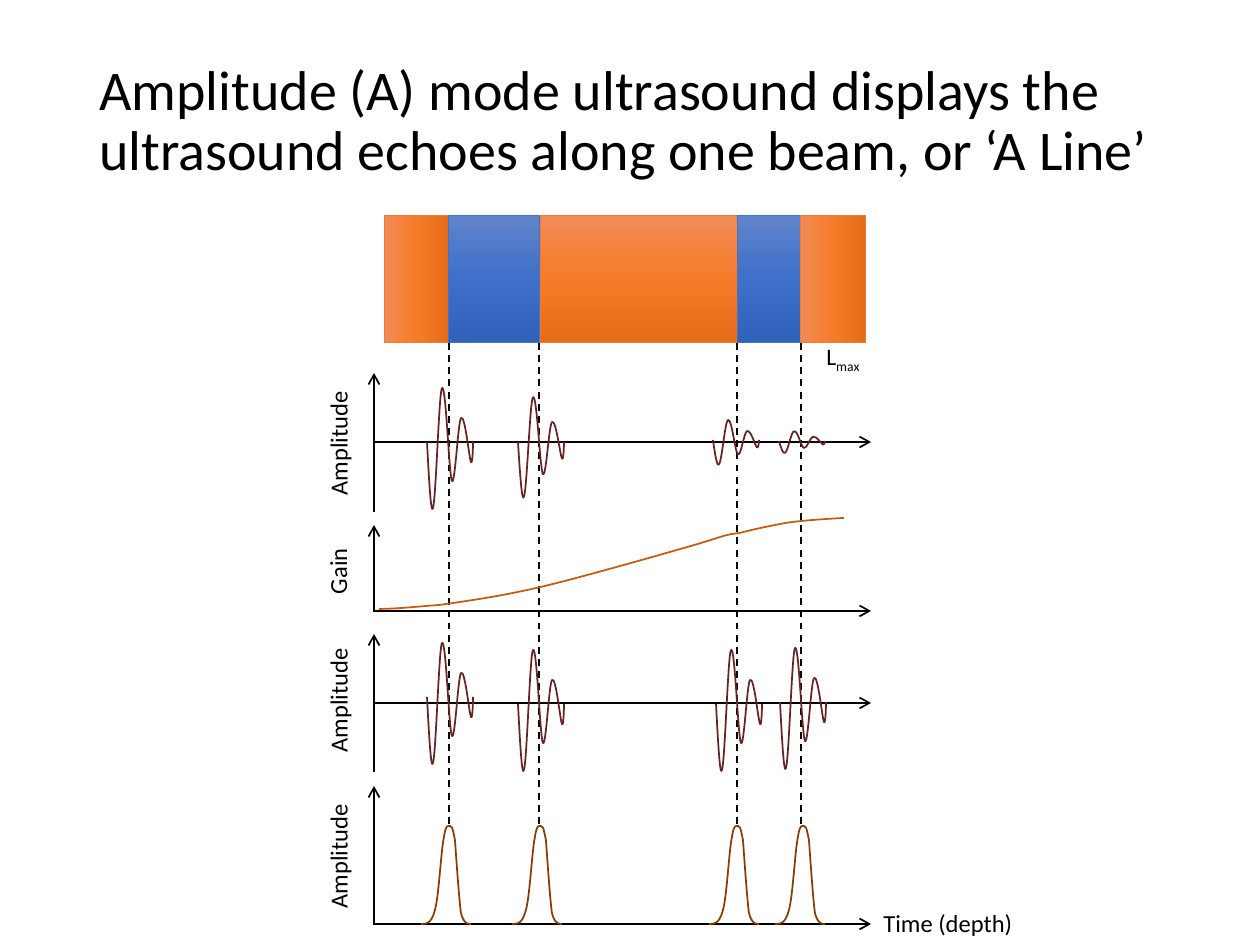
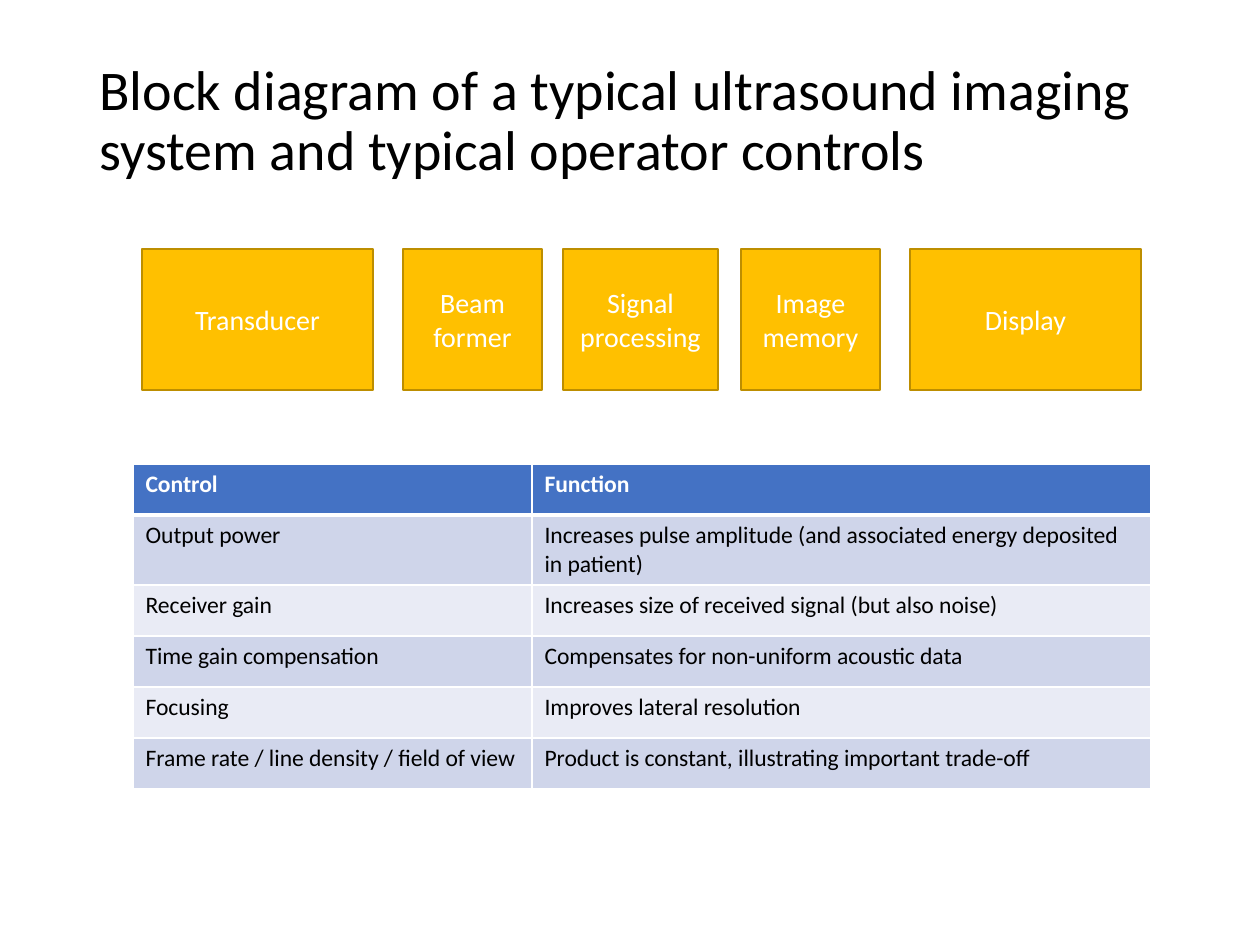
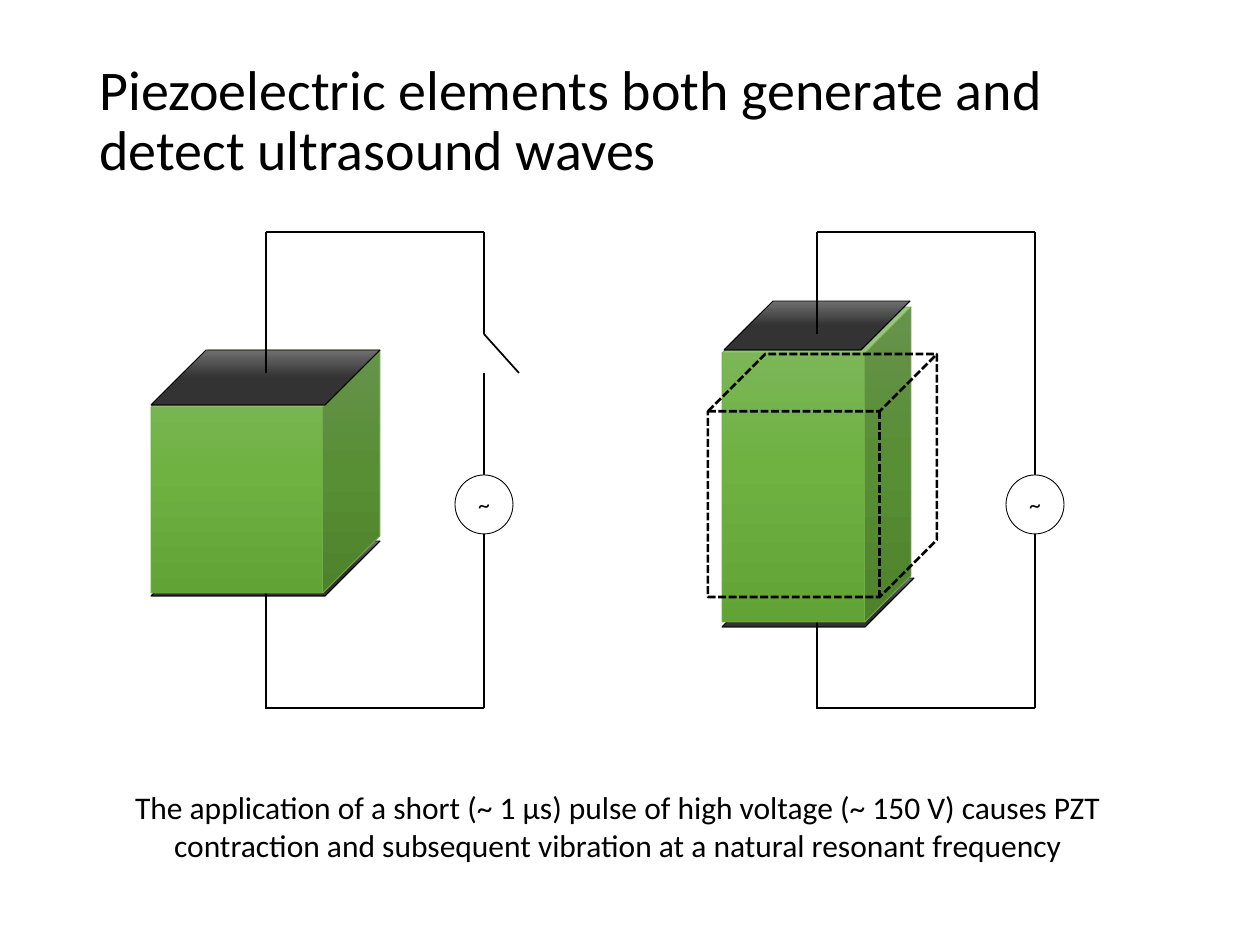
from itertools import pairwise
from typing import NamedTuple

from lxml.etree import SubElement
from pptx import Presentation
from pptx.dml.color import RGBColor
from pptx.enum.dml import MSO_LINE as Dash
from pptx.enum.shapes import MSO_CONNECTOR, MSO_SHAPE as Preset
from pptx.enum.text import MSO_ANCHOR as Anchor, MSO_AUTO_SIZE as AutoSize, PP_ALIGN as Align
from pptx.oxml.ns import qn
from pptx.util import Emu, Pt

PX = 914400 / 126
FONT = "Calibri"
COLORS = {
    "black": "000000",
    "white": "FFFFFF",
    "echo": "632523",
    "gain": "C55A11",
    "envelope": "843C0B",
    "block": "FFC000",
    "block_edge": "BD8E00",
    "header": "4472C4",
    "band_dark": "CFD5EA",
    "band_light": "E9EBF5",
    "blue_edge": "4472C4",
    "orange_edge": "ED7D31",
    "green_edge": "70AD47",
}
GRADIENTS = {
    "blue": ("6183CB", "3E70CA", "3062BB"),
    "orange": ("F18C57", "F67B28", "E56C19"),
    "green": ("81B861", "6FB242", "62A336"),
    "black": ("4B4B4B", "000000", "000000"),
}


class Box(NamedTuple):
    left: int
    top: int
    width: int
    height: int


class Point(NamedTuple):
    x: int
    y: int


class Pulse(NamedTuple):
    left: int
    baseline: int
    percent: int = 100


class Plot(NamedTuple):
    label: str
    label_box: Box
    baseline: int
    bottom: int
    top: int


class Block(NamedTuple):
    label: str
    left: int
    width: int


class Element(NamedTuple):
    bottom_plate: Box
    body: Box
    depth: float
    top_plate: Box
    lead_end: int
    shift: int


# Each curve is a start point followed by groups of three cubic control points.
ECHO = [Point(*xy) for xy in (
    (0, 0), (2, 38), (4, 74), (6, 66), (9, 57), (12, -50), (15, -54),
    (19, -59), (22, 34), (25, 39), (28, 44), (31, -20), (34, -24),
    (38, -28), (42, 15), (44, 20), (45, 24), (46, 11), (46, 0))]
ENVELOPE = [Point(*xy) for xy in (
    (0, 0), (5, 0), (10, 1), (14, -14), (18, -28), (20, -73), (23, -87),
    (25, -101), (28, -98), (29, -98), (31, -97), (31, -99), (34, -84),
    (35, -71), (38, -25), (40, -11), (43, 2), (50, 0), (50, 0))]
GAIN = [Point(*xy) for xy in (
    (379, 609), (396, 609), (413, 607), (440, 605), (467, 601), (498, 597), (541, 587),
    (584, 577), (698, 544), (698, 544), (731, 534), (724, 535), (740, 533),
    (755, 529), (770, 526), (786, 523), (804, 520), (844, 518), (844, 518))]

TISSUE_EDGES = (384, 449, 540, 737, 801, 866)
INTERFACES = (449, 539, 737, 801)
ECHOES = (
    Pulse(427, 442), Pulse(518, 442, 83), Pulse(713, 440, 37), Pulse(779, 441, 18),
    Pulse(427, 697), Pulse(518, 704), Pulse(716, 704), Pulse(780, 702),
)
ENVELOPES = [Pulse(left, 924) for left in (421, 512, 709, 775)]
PLOTS = (
    Plot("Amplitude", Box(273, 421, 131, 43), 442, 512, 373),
    Plot("Gain", Box(302, 549, 72, 43), 611, 612, 525),
    Plot("Amplitude", Box(273, 678, 131, 43), 703, 772, 634),
    Plot("Amplitude", Box(273, 834, 131, 43), 924, 925, 786),
)
BLOCKS = (
    Block("Transducer", 142, 231),
    Block("Beam former", 403, 139),
    Block("Signal processing", 563, 155),
    Block("Image memory", 741, 139),
    Block("Display", 910, 231),
)
CONTROLS = (
    ("Control", "Function"),
    ("Output power", "Increases pulse amplitude (and associated energy deposited in patient)"),
    ("Receiver gain", "Increases size of received signal (but also noise)"),
    ("Time gain compensation", "Compensates for non-uniform acoustic data"),
    ("Focusing", "Improves lateral resolution"),
    ("Frame rate / line density / field of view",
     "Product is constant, illustrating important trade-off"),
)
RESTING = Element(Box(151, 541, 229, 55), Box(151, 350, 229, 243), 0.25,
                  Box(151, 350, 229, 55), 373, 0)
DRIVEN = Element(Box(722, 578, 192, 49), Box(722, 307, 189, 315), 0.244,
                 Box(724, 301, 186, 49), 334, 551)


def px(length: float) -> Emu:
    return Emu(round(length * PX))


def rgb(name: str) -> RGBColor:
    return RGBColor.from_string(COLORS[name])


def add_span(para, text: str, *, size: float, color: str = "black",
             bold: bool = False, baseline: int = 0) -> None:
    """Append a run; a negative baseline percentage makes a subscript."""
    span = para.add_run()
    span.text = text
    span.font.name = FONT
    span.font.size = Pt(size)
    span.font.bold = bold
    span.font.color.rgb = rgb(color)
    if baseline:
        span.font._element.set("baseline", str(baseline * 1000))


def write(frame, text: str, *, size: float, color: str = "black", bold: bool = False,
          align=Align.LEFT, anchor=Anchor.TOP, wrap: bool = True, spacing: float = 1.0):
    frame.word_wrap = wrap
    frame.vertical_anchor = anchor
    para = frame.paragraphs[0]
    para.alignment = align
    para.line_spacing = spacing
    add_span(para, text, size=size, color=color, bold=bold)
    return para


def add_text(slide, box: Box, text: str, *, rotation: int = 0, grow: bool = True, **style):
    holder = slide.shapes.add_textbox(*map(px, box))
    holder.rotation = rotation
    para = write(holder.text_frame, text, **style)
    holder.text_frame.auto_size = AutoSize.SHAPE_TO_FIT_TEXT if grow else AutoSize.NONE
    return para


def add_titled_slide(deck, title: str):
    slide = deck.slides.add_slide(deck.slide_layouts[6])
    add_text(slide, Box(87, 50, 1086, 145), title, grow=False,
             size=32, anchor=Anchor.MIDDLE, spacing=0.9)
    return slide


def add_preset(slide, preset, box: Box, *, edge: str, fill: str = "",
               gradient: str = "", angle: int = 90, width: float = 0.5):
    """Draw a preset shape; the gradient angle runs clockwise from left to right."""
    shape = slide.shapes.add_shape(preset, *map(px, box))
    shape.shadow.inherit = False
    shape.line.color.rgb = rgb(edge)
    shape.line.width = Pt(width)
    if gradient:
        shape.fill.gradient()
        shape.fill.gradient_angle = -angle % 360
        stops = shape._element.spPr.find(".//" + qn("a:gsLst"))
        stops.clear()
        for position, color in zip((0, 50000, 100000), GRADIENTS[gradient]):
            stop = SubElement(stops, qn("a:gs"), pos=str(position))
            SubElement(stop, qn("a:srgbClr"), val=color)
    elif fill:
        shape.fill.solid()
        shape.fill.fore_color.rgb = rgb(fill)
    else:
        shape.fill.background()
    return shape


def add_line(slide, start: Point, end: Point, *, arrow: bool = False, dash=None) -> None:
    line = slide.shapes.add_connector(MSO_CONNECTOR.STRAIGHT, *map(px, (*start, *end)))
    line.line.color.rgb = rgb("black")
    line.line.width = Pt(1)
    if dash:
        line.line.dash_style = dash
    if arrow:
        SubElement(line.line._get_or_add_ln(), qn("a:tailEnd"), type="arrow")
    SubElement(line._element.spPr, qn("a:effectLst"))


def add_curve(slide, points: list[Point], color: str) -> None:
    """Draw an open outline whose points are a start and cubic control triples."""
    start, *controls = [(px(x), px(y)) for x, y in points]
    builder = slide.shapes.build_freeform(*start)
    builder.add_line_segments(controls, close=False)
    curve = builder.convert_to_shape()
    curve.shadow.inherit = False
    curve.fill.background()
    curve.line.color.rgb = rgb(color)
    curve.line.width = Pt(1)
    outline = curve._element.spPr.find(".//" + qn("a:path"))
    segments = outline.findall(qn("a:lnTo"))
    for first in range(0, len(segments), 3):
        cubic = SubElement(outline, qn("a:cubicBezTo"))
        for segment in segments[first:first + 3]:
            cubic.append(segment[0])
            outline.remove(segment)


def add_pulse(slide, outline: list[Point], pulse: Pulse, color: str) -> None:
    points = [Point(pulse.left + x, pulse.baseline + y * pulse.percent / 100)
              for x, y in outline]
    add_curve(slide, points, color)


def add_plot(slide, plot: Plot) -> None:
    add_line(slide, Point(375, plot.baseline), Point(871, plot.baseline), arrow=True)
    add_line(slide, Point(374, plot.bottom), Point(374, plot.top), arrow=True)
    add_text(slide, plot.label_box, plot.label, rotation=270, size=14, wrap=False)


def build_a_mode(deck) -> None:
    slide = add_titled_slide(deck, "Amplitude (A) mode ultrasound displays the "
                                   "ultrasound echoes along one beam, or ‘A Line’")
    for x in INTERFACES:
        add_line(slide, Point(x, 343), Point(x, 825), dash=Dash.DASH)
    for index, (left, right) in enumerate(pairwise(TISSUE_EDGES)):
        tissue = "blue" if index % 2 else "orange"
        add_preset(slide, Preset.RECTANGLE, Box(left, 216, right - left, 127),
                   edge=tissue + "_edge", gradient=tissue,
                   angle=0 if index in (0, 4) else 90)
    depth_label = add_text(slide, Box(814, 336, 76, 50), "L", size=13.5, wrap=False)
    add_span(depth_label, "max", size=13.5, baseline=-25)
    for plot in PLOTS:
        add_plot(slide, plot)
    for echo in ECHOES:
        add_pulse(slide, ECHO, echo, "echo")
    add_curve(slide, GAIN, "gain")
    for envelope in ENVELOPES:
        add_pulse(slide, ENVELOPE, envelope, "envelope")
    add_text(slide, Box(871, 902, 155, 43), "Time (depth)", size=14, wrap=False)


def set_borders(cell, **widths: float) -> None:
    """Give the cell white borders, with the widths in points by side."""
    properties = cell._tc.get_or_add_tcPr()
    for index, (side, width) in enumerate(widths.items()):
        border = properties.makeelement(qn("a:ln" + side), {"w": str(Pt(width))})
        fill = SubElement(border, qn("a:solidFill"))
        SubElement(fill, qn("a:srgbClr"), val=COLORS["white"])
        properties.insert(index, border)


def add_control_table(slide) -> None:
    row_height, widths = 51, (399, 619)
    box = Box(133, 464, sum(widths), row_height * len(CONTROLS))
    table = slide.shapes.add_table(len(CONTROLS), len(widths), *map(px, box)).table
    for column, width in zip(table.columns, widths):
        column.width = px(width)
    for row, texts in enumerate(CONTROLS):
        table.rows[row].height = px(row_height)
        header = row == 0
        fill = "header" if header else "band_dark" if row % 2 else "band_light"
        for column, text in enumerate(texts):
            cell = table.cell(row, column)
            cell.fill.solid()
            cell.fill.fore_color.rgb = rgb(fill)
            para = cell.text_frame.paragraphs[0]
            add_span(para, text, size=13.5, bold=header,
                     color="white" if header else "black")
            set_borders(cell, L=1, R=1, T=3 if row == 1 else 1, B=3 if header else 1)


def build_block_diagram(deck) -> None:
    slide = add_titled_slide(deck, "Block diagram of a typical ultrasound imaging "
                                   "system and typical operator controls")
    for block in BLOCKS:
        shape = add_preset(slide, Preset.RECTANGLE, Box(block.left, 249, block.width, 141),
                           edge="block_edge", fill="block", width=1)
        write(shape.text_frame, block.label, size=16, color="white",
              align=Align.CENTER, anchor=Anchor.MIDDLE)
    add_control_table(slide)


def add_cube(slide, box: Box, depth: float, color: str) -> None:
    cube = add_preset(slide, Preset.CUBE, box, edge="black" if color == "black" else "green_edge",
                      gradient=color)
    cube.adjustments[0] = depth


def add_circuit(slide, element: Element, contacts: list[tuple[Point, Point]]) -> None:
    """Draw an element between its plates, wired to a generator through the contacts."""
    lead, supply = 266 + element.shift, 484 + element.shift
    add_cube(slide, element.bottom_plate, 1, "black")
    add_line(slide, Point(lead, 709), Point(lead, 592))
    add_cube(slide, element.body, element.depth, "green")
    add_cube(slide, element.top_plate, 1, "black")
    wires = [
        (Point(lead, element.lead_end), Point(lead, 232)),
        (Point(supply, 232), Point(lead, 232)),
        (Point(supply, 334), Point(supply, 232)),
        (Point(supply, 708), Point(supply, 533)),
        (Point(supply, 708), Point(lead, 708)),
    ]
    for start, end in wires + contacts:
        add_line(slide, start, end)
    generator = add_preset(slide, Preset.OVAL, Box(supply - 29, 475, 58, 59),
                           edge="black", fill="white")
    write(generator.text_frame, "~", size=13.5, align=Align.CENTER, anchor=Anchor.MIDDLE)


def build_piezoelectric(deck) -> None:
    slide = add_titled_slide(deck, "Piezoelectric elements both generate and "
                                   "detect ultrasound waves")
    open_switch = [(Point(519, 373), Point(484, 334)), (Point(484, 475), Point(484, 373))]
    closed_switch = [(Point(1035, 475), Point(1035, 334))]
    add_circuit(slide, RESTING, open_switch)
    add_circuit(slide, DRIVEN, closed_switch)
    resting_outline = add_preset(slide, Preset.CUBE, Box(708, 354, 229, 243),
                                 edge="black", width=1.5)
    resting_outline.line.dash_style = Dash.SQUARE_DOT
    add_text(slide, Box(63, 782, 1110, 89),
             "The application of a short (~ 1 μs) pulse of high voltage (~ 150 V) causes PZT "
             "contraction and subsequent vibration at a natural resonant frequency",
             size=18, align=Align.CENTER)


def main() -> None:
    deck = Presentation()
    deck.slide_width, deck.slide_height = px(1260), px(945)
    build_a_mode(deck)
    build_block_diagram(deck)
    build_piezoelectric(deck)
    deck.save("out.pptx")


if __name__ == "__main__":
    main()
